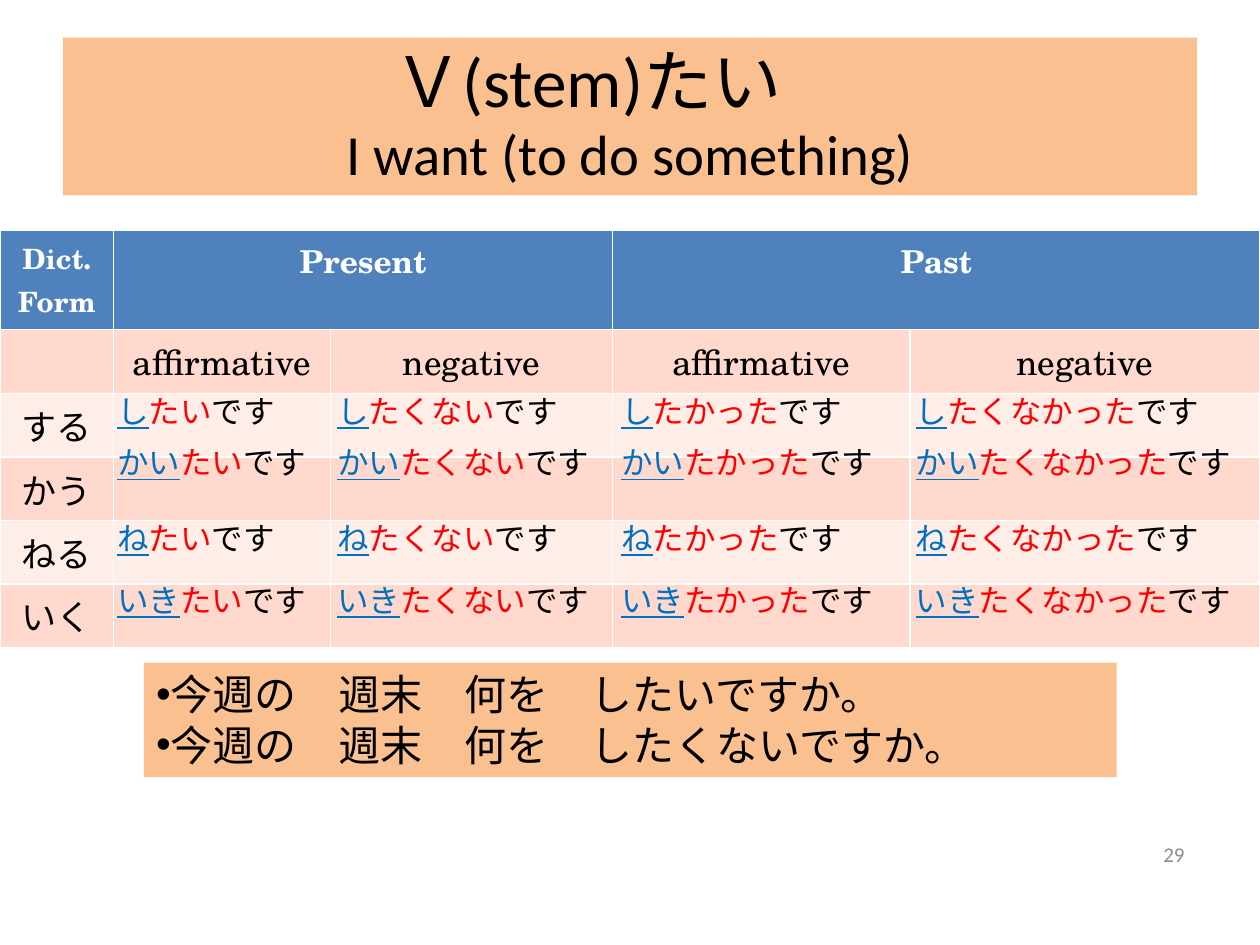
from lxml import etree
from pptx import Presentation
from pptx import util as u
from pptx.dml.color import RGBColor
from pptx.enum import text
from pptx.oxml.ns import qn

BLACK = RGBColor(0x00, 0x00, 0x00)
WHITE = RGBColor(0xFF, 0xFF, 0xFF)
GREY = RGBColor(0x8C, 0x8C, 0x8C)
STEM_BLUE = RGBColor(0x00, 0x70, 0xC0)
ENDING_RED = RGBColor(0xFF, 0x00, 0x00)
HEADER_BLUE = RGBColor(0x4F, 0x81, 0xBD)
BAND_DARK = RGBColor(0xFF, 0xD9, 0xCE)
BAND_LIGHT = RGBColor(0xFF, 0xED, 0xE8)
ORANGE = RGBColor(0xFA, 0xC0, 0x90)

LEFT, CENTER, RIGHT = text.PP_ALIGN.LEFT, text.PP_ALIGN.CENTER, text.PP_ALIGN.RIGHT
SERIF = "TeX Gyre Schola"


def write(paragraph, content, *, size=18, font="Arial", color=BLACK, bold=False,
          underline=False, align=LEFT, bullet=None):
    """Append one formatted run, or a line break for a newline."""
    paragraph.alignment = align
    if bullet:
        properties = paragraph._p.get_or_add_pPr()
        etree.SubElement(properties, qn("a:buFont"), typeface="Arial")
        etree.SubElement(properties, qn("a:buChar"), char=bullet)
    run = paragraph.add_run()
    run.text = content
    run.font.size = u.Pt(size)
    run.font.name = font
    run.font.bold = bold
    run.font.underline = underline
    run.font.color.rgb = color


class GrammarSlide:
    def __init__(self, deck):
        self.slide = deck.slides.add_slide(deck.slide_layouts[5])

    def title(self, box, lines):
        heading = self.slide.shapes.title
        heading.left, heading.top, heading.width, heading.height = map(u.Cm, box)
        heading.fill.solid()
        heading.fill.fore_color.rgb = ORANGE
        frame = heading.text_frame
        frame.auto_size = text.MSO_AUTO_SIZE.NONE
        frame.vertical_anchor = text.MSO_ANCHOR.MIDDLE
        paragraph = frame.paragraphs[0]
        paragraph.line_spacing = 0.95
        for number, (content, size) in enumerate(lines):
            if number:
                paragraph.add_line_break()
            write(paragraph, content, size=size, font="Calibri", align=CENTER)

    def text_box(self, box, paragraphs, fill=None, anchor=text.MSO_ANCHOR.TOP):
        """Each paragraph is a list of (content, format) runs."""
        shape = self.slide.shapes.add_textbox(*map(u.Cm, box))
        if fill:
            shape.fill.solid()
            shape.fill.fore_color.rgb = fill
        frame = shape.text_frame
        frame.word_wrap = True
        frame.vertical_anchor = anchor
        for number, runs in enumerate(paragraphs):
            paragraph = frame.add_paragraph() if number else frame.paragraphs[0]
            for content, style in runs:
                write(paragraph, content, **style)

    def table(self, box, widths, rows, fills, merges):
        """Each cell is a (content, format) pair or None."""
        grid = self.slide.shapes.add_table(len(rows), len(widths), *map(u.Cm, box)).table
        for column, width in zip(grid.columns, widths):
            column.width = u.Cm(width)
        for row, cells, fill in zip(grid.rows, rows, fills):
            for cell, entry in zip(row.cells, cells):
                cell.fill.solid()
                cell.fill.fore_color.rgb = fill
                if entry:
                    content, style = entry
                    write(cell.text_frame.paragraphs[0], content, align=CENTER, **style)
        for row, first, last in merges:
            grid.cell(row, first).merge(grid.cell(row, last))


def main():
    deck = Presentation()
    deck.slide_width, deck.slide_height = u.Cm(25.4), u.Cm(19.05)
    page = GrammarSlide(deck)

    # Title
    page.title((1.27, 0.76, 22.86, 3.18),
               [("Ｖ(stem)たい　 ", 39.6), ("I want (to do something)", 32.4)])

    # Conjugation table
    header = dict(font=SERIF, color=WHITE, bold=True)
    polarity = dict(font=SERIF, size=20)
    verbs = ["する", "かう", "ねる", "いく"]
    rows = [
        [("Dict. Form", dict(header, size=16)), ("Present", header), None,
         ("Past", header), None],
        [None] + [("affirmative", polarity), ("negative", polarity)] * 2,
    ] + [[(verb, dict(size=20))] + [None] * 4 for verb in verbs]
    page.table((0, 4.65, 25.4, 7.62), [2.29, 4.37, 5.69, 5.99, 7.06], rows,
               [HEADER_BLUE, BAND_DARK] + [BAND_LIGHT, BAND_DARK] * 2,
               [(0, 1, 2), (0, 3, 4)])

    # Conjugated forms: every stem with every ending
    stems = [("し", 7.77), ("かい", 8.81), ("ね", 10.34), ("いき", 11.58)]
    endings = [("たい", 2.11, 4.78), ("たくない", 6.55, 5.72),
               ("たかった", 12.27, 6.43), ("たくなかった", 18.21, 7.19)]
    for ending, left, width in endings:
        for stem, top in stems:
            page.text_box((left, top, width, 1.02), [[
                (stem, dict(color=STEM_BLUE, underline=True)),
                (ending, dict(color=ENDING_RED)),
                ("です", {}),
            ]])

    # Practice questions
    questions = ["今週の　週末　何を　したいですか。", "今週の　週末　何を　したくないですか。"]
    page.text_box((2.9, 13.36, 19.61, 2.31),
                  [[(question, dict(size=24, bullet="•"))] for question in questions],
                  fill=ORANGE)

    # Page number
    page.text_box((18.21, 16.71, 5.92, 1.02),
                  [[("29", dict(size=12, font="Calibri", color=GREY, align=RIGHT))]],
                  anchor=text.MSO_ANCHOR.MIDDLE)

    deck.save("out.pptx")


if __name__ == "__main__":
    main()
